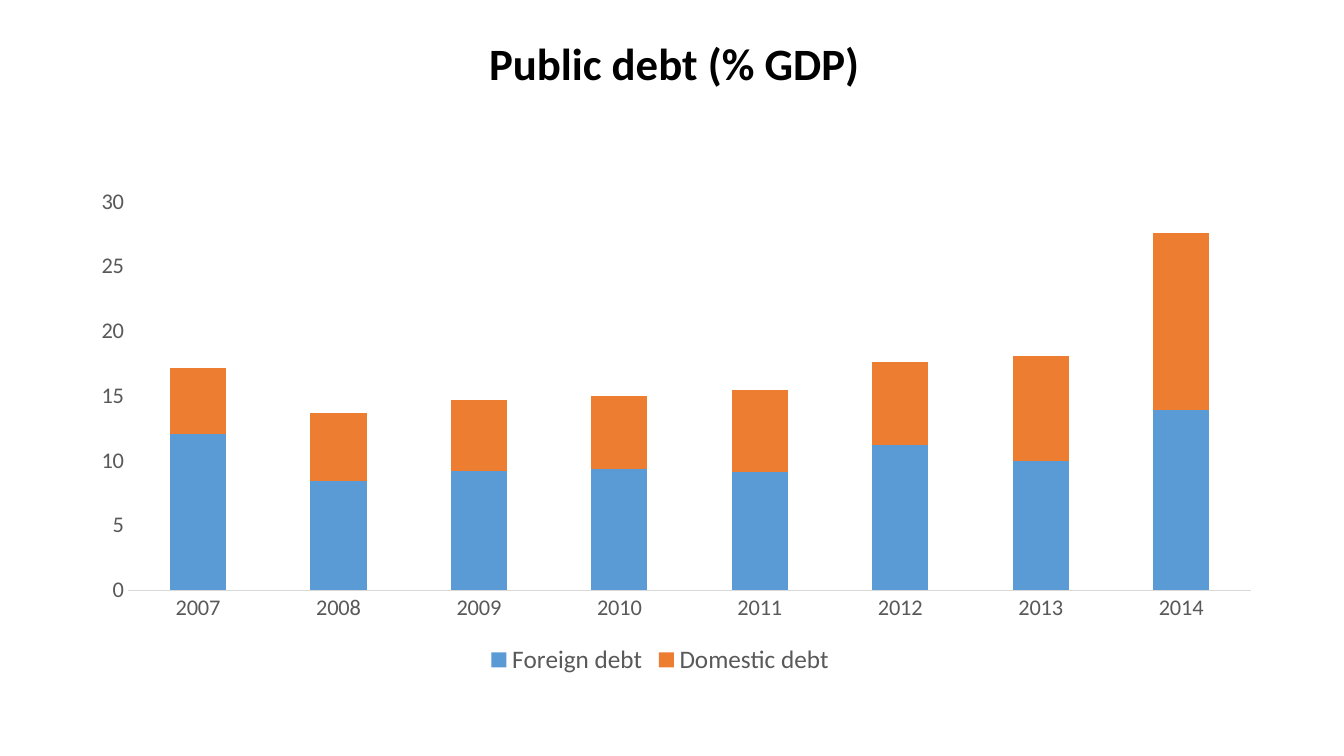
import dataclasses

import lxml.etree
import pptx
import pptx.chart.data
import pptx.dml.color
import pptx.enum.chart
import pptx.enum.text
import pptx.oxml.ns
import pptx.util
from pptx.util import Cm

FONT = "Calibri"
GREY = "595959"
YEARS = [str(year) for year in range(2007, 2015)]


@dataclasses.dataclass
class DebtSeries:
    name: str
    values: list[float]
    color: str


DEBTS = [
    DebtSeries("Foreign debt", [12.1, 8.4, 9.2, 9.4, 9.1, 11.2, 10, 13.9], "5B9BD5"),
    DebtSeries("Domestic debt", [5.1, 5.3, 5.5, 5.6, 6.4, 6.4, 8.1, 13.7], "ED7D31"),
]
PLOT_LAYOUT = {
    "layoutTarget": "inner", "xMode": "edge", "yMode": "edge",
    "x": 0.05, "y": 0.126, "w": 0.95, "h": 0.71,
}


def rgb(color: str) -> pptx.dml.color.RGBColor:
    return pptx.dml.color.RGBColor.from_string(color)


def style_font(font, size: float, color: str, bold: bool = False) -> None:
    font.name = FONT
    font.size = pptx.util.Pt(size)
    font.bold = bold
    font.color.rgb = rgb(color)


def place_plot(chart) -> None:
    """Fix the inner plot area as fractions of the chart."""
    qn = pptx.oxml.ns.qn
    plot_area = chart.element.find(f".//{qn('c:plotArea')}")
    for old_layout in plot_area.findall(qn("c:layout")):
        plot_area.remove(old_layout)
    layout = lxml.etree.Element(qn("c:layout"))
    manual = lxml.etree.SubElement(layout, qn("c:manualLayout"))
    for key, value in PLOT_LAYOUT.items():
        lxml.etree.SubElement(manual, qn(f"c:{key}")).set("val", str(value))
    plot_area.insert(0, layout)


def add_title(page, text: str) -> None:
    title = page.shapes.title
    title.left, title.top, title.width, title.height = Cm(3.1), Cm(0.89), Cm(27.79), Cm(1.57)
    frame = title.text_frame
    frame.text = text
    frame.word_wrap = True
    frame.vertical_anchor = pptx.enum.text.MSO_ANCHOR.MIDDLE
    para = frame.paragraphs[0]
    para.alignment = pptx.enum.text.PP_ALIGN.CENTER
    para.line_spacing = 0.9
    style_font(para.runs[0].font, 32, "000000", bold=True)


def add_debt_chart(page) -> None:
    data = pptx.chart.data.CategoryChartData()
    data.categories = YEARS
    for debt in DEBTS:
        data.add_series(debt.name, debt.values)
    chart = page.shapes.add_chart(
        pptx.enum.chart.XL_CHART_TYPE.COLUMN_STACKED,
        Cm(1.73), Cm(3.35), Cm(29.82), Cm(13.79), data,
    ).chart
    chart.has_title = False
    style_font(chart.font, 10, "000000")
    place_plot(chart)

    # Columns
    plot = chart.plots[0]
    plot.gap_width = 150
    plot.overlap = 100
    plot.vary_by_categories = False
    for series, debt in zip(plot.series, DEBTS):
        series.format.fill.solid()
        series.format.fill.fore_color.rgb = rgb(debt.color)

    # Axes
    for axis in (chart.category_axis, chart.value_axis):
        axis.has_major_gridlines = False
        axis.major_tick_mark = pptx.enum.chart.XL_TICK_MARK.NONE
        axis.minor_tick_mark = pptx.enum.chart.XL_TICK_MARK.NONE
        style_font(axis.tick_labels.font, 16, GREY)
    year_line = chart.category_axis.format.line
    year_line.color.rgb = rgb("D9D9D9")
    year_line.width = pptx.util.Pt(0.75)
    percent_axis = chart.value_axis
    percent_axis.format.line.fill.background()
    percent_axis.minimum_scale = 0
    percent_axis.maximum_scale = 30
    percent_axis.major_unit = 5

    # Legend
    chart.has_legend = True
    chart.legend.position = pptx.enum.chart.XL_LEGEND_POSITION.BOTTOM
    chart.legend.include_in_layout = False
    style_font(chart.legend.font, 18, GREY)


def main() -> None:
    deck = pptx.Presentation()
    deck.slide_width, deck.slide_height = Cm(33.87), Cm(19.05)
    page = deck.slides.add_slide(deck.slide_layouts.get_by_name("Title Only"))
    add_title(page, "Public debt (% GDP)")
    add_debt_chart(page)
    deck.save("out.pptx")


if __name__ == "__main__":
    main()
